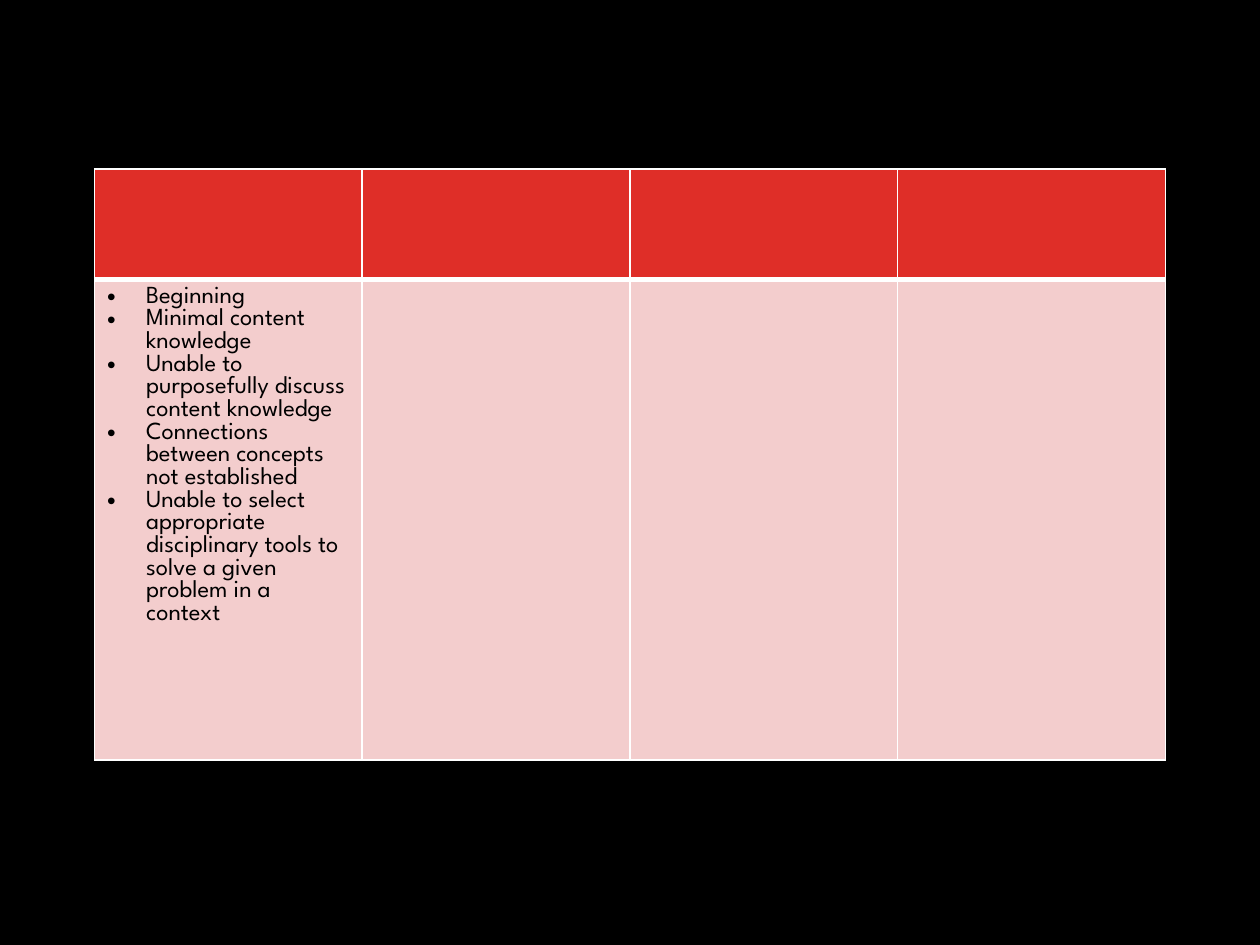
"""Build a slide with a four-column rubric table whose first column is filled in."""
from lxml import etree
from pptx import Presentation
from pptx import util as u
from pptx.dml.color import RGBColor
from pptx.oxml import ns

COLORS = {"background": "000000", "header": "DF2E28", "body": "F3CDCD",
          "border": "FFFFFF", "text": "000000"}
CRITERIA = [
    "Beginning",
    "Minimal content knowledge",
    "Unable to purposefully discuss content knowledge",
    "Connections between concepts not established",
    "Unable to select appropriate disciplinary tools to solve a given problem in a context",
]
ROW_HEIGHTS = [0.88, 3.81]
COLUMN_COUNT = 4


def set_borders(cell, widths):
    properties = cell._tc.get_or_add_tcPr()
    for index, (side, width) in enumerate(widths.items()):
        line = etree.Element(ns.qn(f"a:ln{side}"), w=str(u.Pt(width)))
        fill = etree.SubElement(line, ns.qn("a:solidFill"))
        etree.SubElement(fill, ns.qn("a:srgbClr"), val=COLORS["border"])
        properties.insert(index, line)


def add_bullet(paragraph):
    properties = paragraph._p.get_or_add_pPr()
    properties.set("marL", str(u.Inches(0.31)))
    properties.set("indent", str(u.Inches(-0.31)))
    etree.SubElement(properties, ns.qn("a:buFont"), typeface="Arial")
    etree.SubElement(properties, ns.qn("a:buChar"), char="•")


presentation = Presentation()
presentation.slide_width = u.Inches(10)
presentation.slide_height = u.Inches(7.5)
slide = presentation.slides.add_slide(presentation.slide_layouts[6])
slide.background.fill.solid()
slide.background.fill.fore_color.rgb = RGBColor.from_string(COLORS["background"])

table = slide.shapes.add_table(
    len(ROW_HEIGHTS), COLUMN_COUNT, u.Inches(0.75), u.Inches(1.34),
    u.Inches(8.5), u.Inches(sum(ROW_HEIGHTS))).table

for row_index, (row, height) in enumerate(zip(table.rows, ROW_HEIGHTS)):
    row.height = u.Inches(height)
    is_header = row_index == 0
    for cell in row.cells:
        cell.fill.solid()
        cell.fill.fore_color.rgb = RGBColor.from_string(COLORS["header" if is_header else "body"])
        set_borders(cell, {"L": 1, "R": 1, "T": 1 if is_header else 3, "B": 3 if is_header else 1})

text_frame = table.cell(1, 0).text_frame
for index, criterion in enumerate(CRITERIA):
    paragraph = text_frame.add_paragraph() if index else text_frame.paragraphs[0]
    add_bullet(paragraph)
    run = paragraph.add_run()
    run.text = criterion
    run.font.name = "League Spartan"
    run.font.size = u.Pt(14)
    run.font.color.rgb = RGBColor.from_string(COLORS["text"])

presentation.save("out.pptx")
